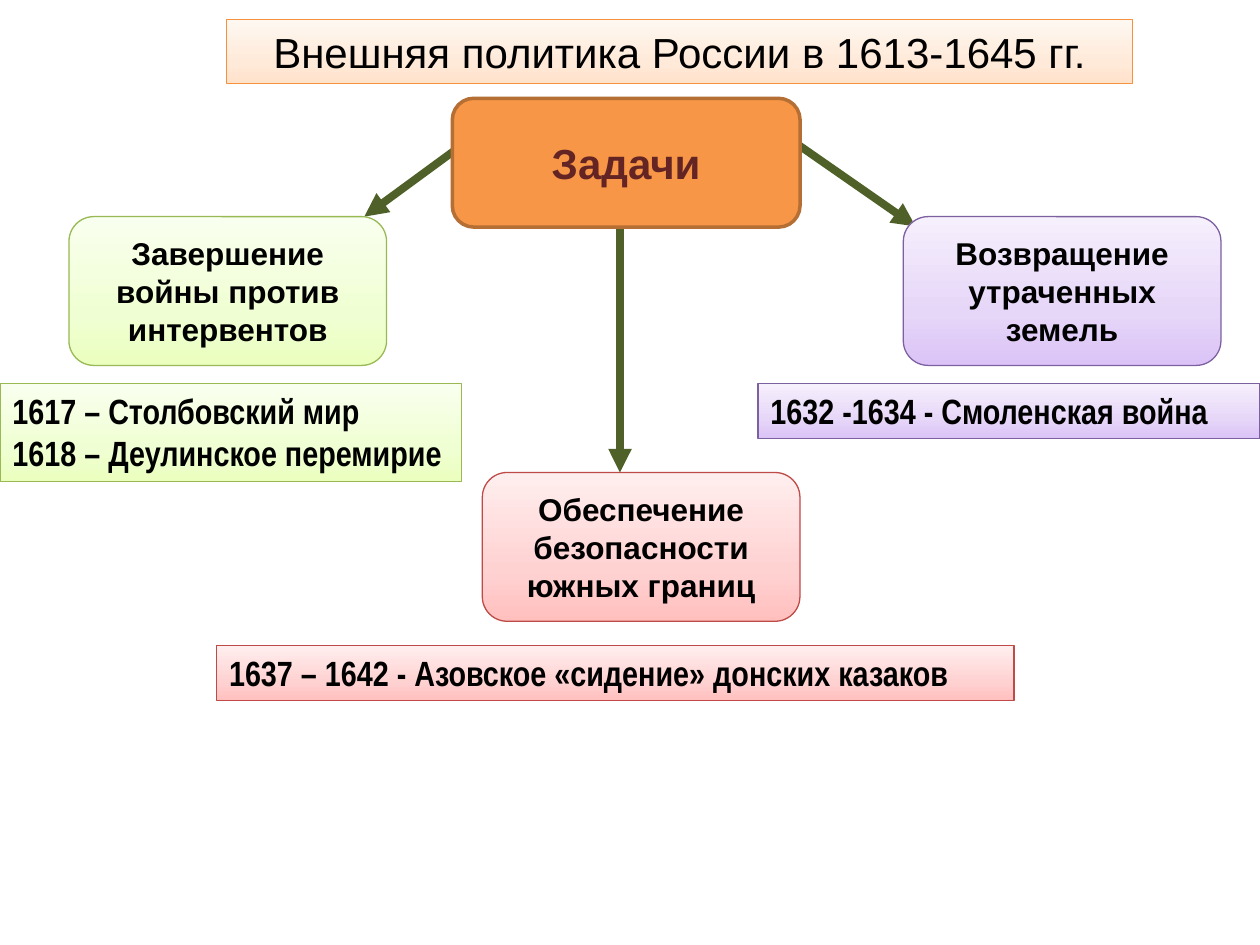
from copy import deepcopy

from pptx import Presentation
from pptx.dml.color import RGBColor
from pptx.enum.shapes import MSO_CONNECTOR, MSO_SHAPE
from pptx.enum.text import MSO_ANCHOR, PP_ALIGN
from pptx.oxml.ns import qn
from pptx.util import Pt

RECT, ROUNDED = MSO_SHAPE.RECTANGLE, MSO_SHAPE.ROUNDED_RECTANGLE
STRAIGHT = MSO_CONNECTOR.STRAIGHT
LEFT, CENTER = PP_ALIGN.LEFT, PP_ALIGN.CENTER
TOP, MIDDLE = MSO_ANCHOR.TOP, MSO_ANCHOR.MIDDLE

BLACK = RGBColor(0x00, 0x00, 0x00)
MAROON = RGBColor(0x63, 0x24, 0x23)
OLIVE = RGBColor(0x4F, 0x61, 0x28)
TASK_FILL = RGBColor(0xF7, 0x96, 0x46)
TASK_LINE = RGBColor(0xB5, 0x6E, 0x33)

# Each theme: outline, then gradient colours from bottom to top
ORANGE = (RGBColor(0xF6, 0x92, 0x3F),
          (RGBColor(0xFF, 0xE2, 0xCA), RGBColor(0xFF, 0xEA, 0xDA), RGBColor(0xFE, 0xF8, 0xF1)))
GREEN = (RGBColor(0x98, 0xB9, 0x54),
         (RGBColor(0xEB, 0xFF, 0xBF), RGBColor(0xF0, 0xFF, 0xD3), RGBColor(0xF9, 0xFF, 0xEF)))
PURPLE = (RGBColor(0x7C, 0x60, 0xA0),
          (RGBColor(0xDB, 0xC3, 0xF7), RGBColor(0xE6, 0xD6, 0xF8), RGBColor(0xF6, 0xEF, 0xFC)))
RED = (RGBColor(0xBE, 0x4B, 0x48),
       (RGBColor(0xFF, 0xC0, 0xBE), RGBColor(0xFF, 0xD2, 0xD2), RGBColor(0xFF, 0xEE, 0xEE)))
GRADIENT_POSITIONS = (0, 0.35, 1)

# Content, with places as left, top, width, height in points
TITLE = ("Внешняя политика России в 1613-1645 гг.", (129.5, 11.3, 517.7, 36.3))
TASK = ("Задачи", (258.5, 56.2, 198.7, 73.6))
GOAL_SIZE = (181.5, 85)
BRANCHES = [
    {"theme": GREEN, "goal": "Завершение войны против интервентов", "goal_at": (39.4, 123.8),
     "facts": ["1617 – Столбовский мир", "1618 – Деулинское перемирие"],
     "facts_box": (0, 219.3, 263.7, 55.7), "arrow": (270, 78.5, 208.2, 123.8)},
    {"theme": PURPLE, "goal": "Возвращение утраченных земель", "goal_at": (516.2, 123.8),
     "facts": ["1632 -1634 - Смоленская война"],
     "facts_box": (433.2, 219.3, 286.8, 31.5), "arrow": (450, 78.5, 523.2, 129.4)},
    {"theme": RED, "goal": "Обеспечение безопасности южных границ", "goal_at": (275.6, 270),
     "facts": ["1637 – 1642 - Азовское «сидение» донских казаков"],
     "facts_box": (123.8, 369, 455.6, 31.5), "arrow": (354.3, 101.5, 354.3, 270)},
]


def add_arrow(slide, ends):
    arrow = slide.shapes.add_connector(STRAIGHT, *map(Pt, ends))
    arrow.line.color.rgb = OLIVE
    arrow.line.width = Pt(4.5)
    properties = arrow._element.spPr
    line = properties.find(qn("a:ln"))
    line.append(line.makeelement(qn("a:tailEnd"), {"type": "triangle"}))
    properties.append(properties.makeelement(qn("a:effectLst"), {}))


def add_box(slide, kind, box, outline, width=0.75):
    shape = slide.shapes.add_shape(kind, *map(Pt, box))
    shape.shadow.inherit = False
    shape.line.color.rgb = outline
    shape.line.width = Pt(width)
    return shape


def add_gradient_box(slide, kind, box, theme):
    outline, colours = theme
    shape = add_box(slide, kind, box, outline)
    shape.fill.gradient()
    shape.fill.gradient_angle = 90
    # The default gradient has two stops: add the middle one
    stops = shape._element.spPr.find(".//" + qn("a:gsLst"))
    stops.insert(1, deepcopy(stops[0]))
    for stop, colour, position in zip(shape.fill.gradient_stops, colours, GRADIENT_POSITIONS):
        stop.color.rgb = colour
        stop.position = position
    return shape


def write(shape, lines, size, font="Arial", bold=True, colour=BLACK, align=CENTER, anchor=MIDDLE):
    frame = shape.text_frame
    frame.word_wrap = True
    frame.vertical_anchor = anchor
    frame.text = "\n".join(lines)
    for paragraph in frame.paragraphs:
        paragraph.alignment = align
        paragraph.font.name = font
        paragraph.font.size = Pt(size)
        paragraph.font.bold = bold
        paragraph.font.color.rgb = colour


def main():
    deck = Presentation()
    deck.slide_width, deck.slide_height = Pt(720), Pt(540)
    slide = deck.slides.add_slide(deck.slide_layouts[6])

    # Arrows lie behind the boxes
    for branch in BRANCHES:
        add_arrow(slide, branch["arrow"])

    # Title and central task
    title, title_box = TITLE
    write(add_gradient_box(slide, RECT, title_box, ORANGE), [title], 24, bold=False, anchor=TOP)
    task, task_box = TASK
    task_shape = add_box(slide, ROUNDED, task_box, TASK_LINE, width=2)
    task_shape.fill.solid()
    task_shape.fill.fore_color.rgb = TASK_FILL
    write(task_shape, [task], 24, colour=MAROON)

    # Goals, each with its events
    for branch in BRANCHES:
        goal = add_gradient_box(slide, ROUNDED, branch["goal_at"] + GOAL_SIZE, branch["theme"])
        write(goal, [branch["goal"]], 18)
        facts = add_gradient_box(slide, RECT, branch["facts_box"], branch["theme"])
        write(facts, branch["facts"], 20, font="Arial Narrow", align=LEFT, anchor=TOP)

    deck.save("out.pptx")


if __name__ == "__main__":
    main()
